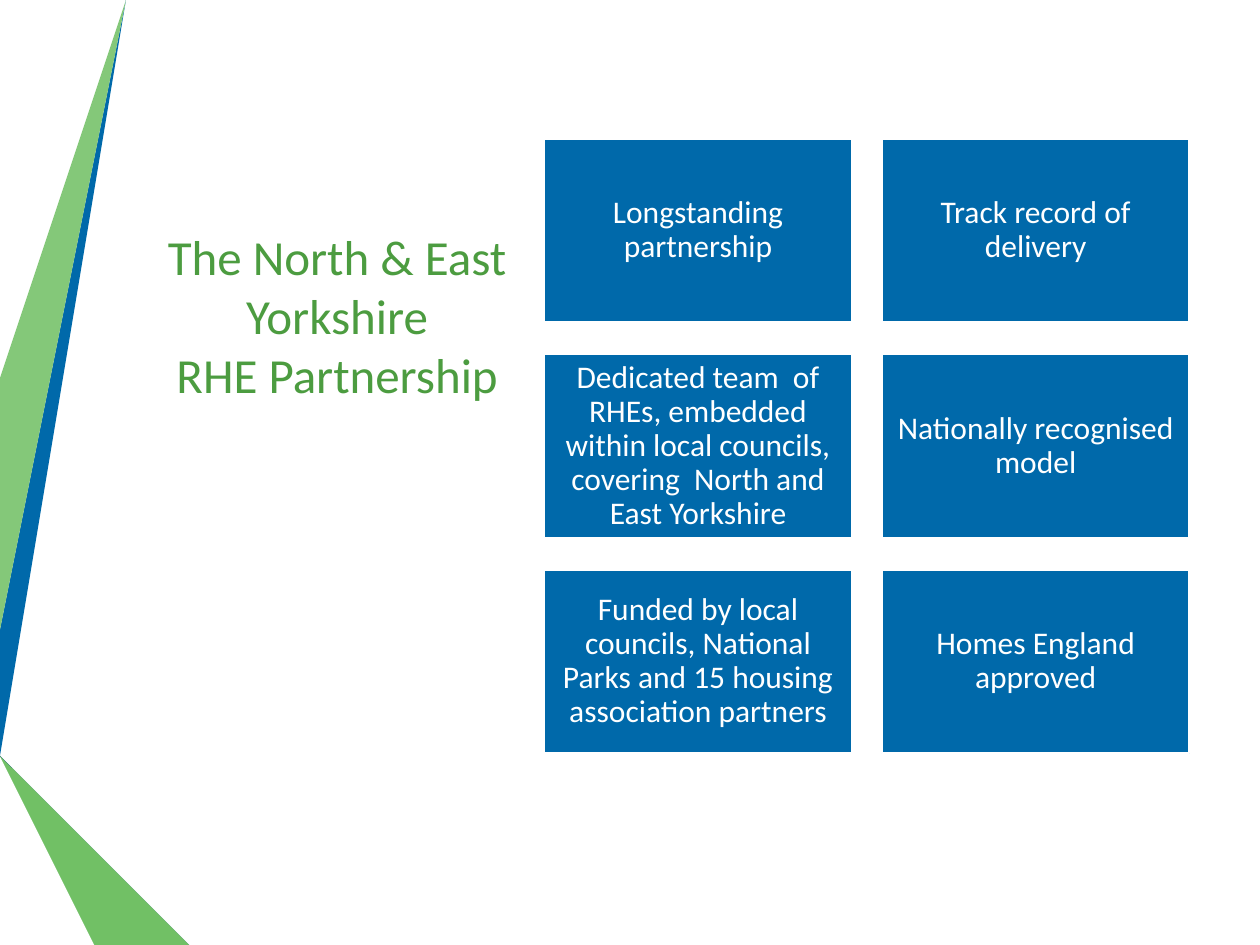
from pptx import Presentation
from pptx.dml.color import RGBColor
from pptx.enum.shapes import MSO_SHAPE
from pptx.enum.text import MSO_ANCHOR as Anchor, PP_ALIGN as Align
from pptx.util import Inches, Pt

WIDTH, HEIGHT = 10, 7.5
FONT = "Calibri"
COLOURS = {
    "blue": "0069AA",
    "deep blue": "004F80",
    "navy": "003455",
    "light green": "84C879",
    "mid green": "71C065",
    "edge green": "5EB750",
    "title green": "4C9C40",
    "white": "FFFFFF",
}

# Ribbon colour and its corner points in inches, from back to front
RIBBONS = [
    ("blue", [(0, 5.44), (0, 5.75), (0.22, 5.79), (1.17, 0), (0.89, 0)]),
    ("light green", [(0.83, 0), (0.55, 0), (0, 3.36), (0, 5.06)]),
    ("edge green", [(0, 6.19), (0, 6.21), (0.93, HEIGHT), (0.99, HEIGHT)]),
    ("navy", [(0, 5.79), (0, 5.8), (1.56, HEIGHT), (1.63, HEIGHT)]),
    ("deep blue", [(0, 5.79), (1.63, HEIGHT), (2.33, HEIGHT), (0.22, 5.79), (0, 5.75)]),
    ("mid green", [(0, 6.19), (0.99, HEIGHT), (1.51, HEIGHT), (0, 5.86)]),
]

TITLE = "The North & East Yorkshire\vRHE Partnership"
CARDS = [
    "Longstanding partnership",
    "Track record of delivery",
    "Dedicated team  of RHEs, embedded within local councils, "
    "covering  North and East Yorkshire",
    "Nationally recognised model",
    "Funded by local councils, National Parks and 15 housing association partners",
    "Homes England approved",
]
COLUMNS = 2
GRID_LEFT, GRID_TOP = 4.32, 1.1
CARD_WIDTH, CARD_HEIGHT = 2.44, 1.46
COLUMN_STEP, ROW_STEP = 2.68, 1.71


def colour(name):
    return RGBColor.from_string(COLOURS[name])


def write_text(shape, text, size, ink, anchor, spacing=None, inset=None):
    frame = shape.text_frame
    frame.word_wrap = True
    frame.vertical_anchor = anchor
    if inset is not None:
        frame.margin_left = frame.margin_right = Inches(inset)
        frame.margin_top = frame.margin_bottom = Inches(inset)
    para = frame.paragraphs[0]
    para.text = text
    para.alignment = Align.CENTER
    para.line_spacing = spacing
    for span in para.runs:
        span.font.name = FONT
        span.font.size = Pt(size)
        span.font.color.rgb = colour(ink)


def paint(shape, fill):
    shape.shadow.inherit = False
    shape.fill.solid()
    shape.fill.fore_color.rgb = colour(fill)


def add_ribbon(page, fill, corners):
    start, *others = corners
    builder = page.shapes.build_freeform(*start, scale=Inches(1))
    builder.add_line_segments(others, close=True)
    ribbon = builder.convert_to_shape()
    paint(ribbon, fill)
    ribbon.line.fill.background()


def add_title(page):
    box = page.shapes.add_textbox(Inches(1.22), Inches(1.75), Inches(2.91), Inches(1.5))
    write_text(box, TITLE, size=28, ink="title green", anchor=Anchor.BOTTOM)


def add_card(page, column, row, text):
    card = page.shapes.add_shape(
        MSO_SHAPE.RECTANGLE,
        Inches(GRID_LEFT + column * COLUMN_STEP),
        Inches(GRID_TOP + row * ROW_STEP),
        Inches(CARD_WIDTH),
        Inches(CARD_HEIGHT),
    )
    paint(card, "blue")
    card.line.color.rgb = colour("white")
    card.line.width = Pt(1.25)
    write_text(card, text, size=18, ink="white", anchor=Anchor.MIDDLE,
               spacing=0.9, inset=0.07)


def main():
    deck = Presentation()
    deck.slide_width, deck.slide_height = Inches(WIDTH), Inches(HEIGHT)
    page = deck.slides.add_slide(deck.slide_layouts[6])
    for fill, corners in RIBBONS:
        add_ribbon(page, fill, corners)
    add_title(page)
    for index, text in enumerate(CARDS):
        row, column = divmod(index, COLUMNS)
        add_card(page, column, row, text)
    deck.save("out.pptx")


if __name__ == "__main__":
    main()
